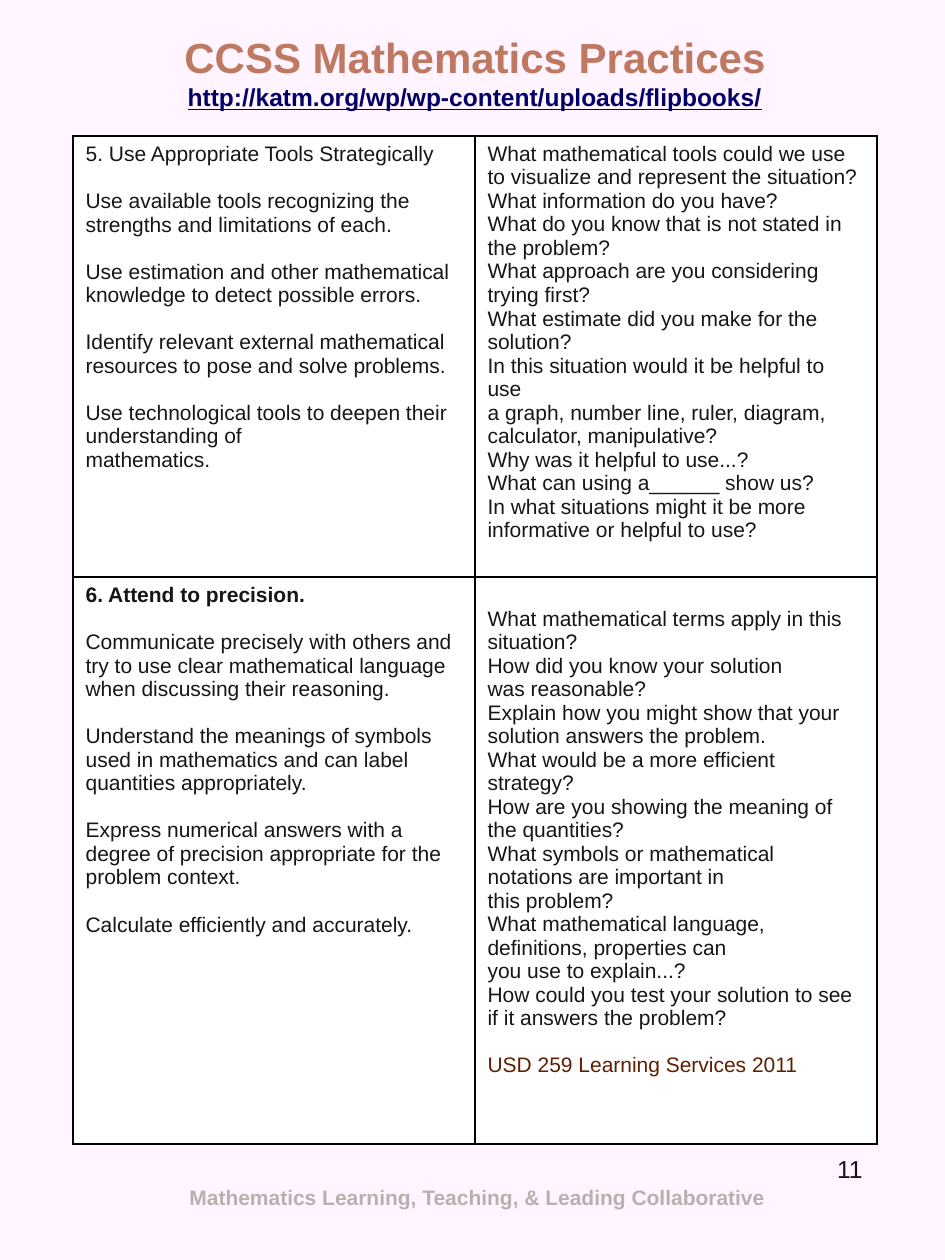
from lxml import etree
from pptx import Presentation, util as u
from pptx.dml.color import RGBColor
from pptx.enum import text as t
from pptx.oxml.ns import qn

PX = 914400 / 126
FONT = "Arial"
INK = "161616"
LINE = 13.5  # height of one line of 12 pt text, in points

# Each cell is a list of groups; a gap of one line parts the groups.
TOOLS = [
    ["5. Use Appropriate Tools Strategically"],
    ["Use available tools recognizing the strengths and limitations of each."],
    ["Use estimation and other mathematical knowledge to detect possible errors."],
    ["Identify relevant external mathematical resources to pose and solve problems."],
    ["Use technological tools to deepen their understanding of", "mathematics."],
]
TOOLS_ASK = [[
    "What mathematical tools could we use to visualize and represent the situation?",
    "What information do you have?",
    "What do you know that is not stated in the problem?",
    "What approach are you considering trying first?",
    "What estimate did you make for the solution?",
    "In this situation would it be helpful to use",
    "a graph, number line, ruler, diagram, calculator, manipulative?",
    "Why was it helpful to use...?",
    "What can using a______ show us?",
    "In what situations might it be more informative or helpful to use?",
]]
PRECISE = [
    ["6. Attend to precision."],
    ["Communicate precisely with others and try to use clear mathematical "
     "language when discussing their reasoning."],
    ["Understand the meanings of symbols used in mathematics and can label "
     "quantities appropriately."],
    ["Express numerical answers with a degree of precision appropriate for "
     "the problem context."],
    ["Calculate efficiently and accurately."],
]
PRECISE_ASK = [
    ["What mathematical terms apply in this situation?",
     "How did you know your solution",
     "was reasonable?",
     "Explain how you might show that your solution answers the problem.",
     "What would be a more efficient strategy?",
     "How are you showing the meaning of the quantities?",
     "What symbols or mathematical notations are important in",
     "this problem?",
     "What mathematical language, definitions, properties can",
     "you use to explain...?",
     "How could you test your solution to see if it answers the problem?"],
    ["USD 259 Learning Services 2011"],
]


def px(n):
    return u.Emu(round(n * PX))


def rgb(code):
    return RGBColor.from_string(code)


def style(para, size, color=INK, bold=False, align=None):
    font = para.font
    font.name, font.size, font.bold = FONT, u.Pt(size), bold
    font.color.rgb = rgb(color)
    para.alignment = align


def add_box(slide, box):
    frame = slide.shapes.add_textbox(*map(px, box)).text_frame
    frame.word_wrap = True
    return frame


def add_title(slide, box):
    frame = add_box(slide, box)
    frame.vertical_anchor = t.MSO_ANCHOR.MIDDLE
    frame.margin_top, frame.margin_bottom = 0, px(28)
    head, link = frame.paragraphs[0], frame.add_paragraph()
    head.text = "CCSS Mathematics Practices"
    link.text = "http://katm.org/wp/wp-content/uploads/flipbooks/"
    style(head, 24, "BE7960", True, t.PP_ALIGN.CENTER)
    style(link, 14, "000066", True, t.PP_ALIGN.CENTER)
    link.font.underline = True


def add_edges(cell, color="000000"):
    props = cell._tc.get_or_add_tcPr()
    for side in ("lnL", "lnR", "lnT", "lnB"):
        edge = etree.SubElement(props, qn(f"a:{side}"), w=str(u.Pt(1)))
        fill = etree.SubElement(edge, qn("a:solidFill"))
        etree.SubElement(fill, qn("a:srgbClr"), val=color)


def fill_cell(cell, groups):
    add_edges(cell)
    cell.fill.solid()
    cell.fill.fore_color.rgb = rgb("FFFFFF")
    frame = cell.text_frame
    for g, group in enumerate(groups):
        for i, line in enumerate(group):
            first = g == 0 and i == 0
            para = frame.paragraphs[0] if first else frame.add_paragraph()
            para.text = line
            style(para, 12)
            if g and i == 0:
                para.space_before = u.Pt(LINE)


def add_grid(slide, box, heights):
    rows = [(TOOLS, TOOLS_ASK), (PRECISE, PRECISE_ASK)]
    grid = slide.shapes.add_table(len(rows), 2, *map(px, box)).table
    grid.first_row = grid.horz_banding = False
    for col in grid.columns:
        col.width = px(box[2] // 2)
    for r, row in enumerate(rows):
        grid.rows[r].height = px(heights[r])
        for c, groups in enumerate(row):
            fill_cell(grid.cell(r, c), groups)
    # Heading in bold, credit in brown, one line of space above the questions
    grid.cell(1, 0).text_frame.paragraphs[0].font.bold = True
    ask = grid.cell(1, 1)
    ask.margin_top = px(30)
    ask.text_frame.paragraphs[-1].font.color.rgb = rgb("5C1F00")


def add_note(slide, box, words, *look):
    para = add_box(slide, box).paragraphs[0]
    para.text = words
    style(para, *look)


def main():
    deck = Presentation()
    deck.slide_width, deck.slide_height = px(945), px(1260)
    slide = deck.slides.add_slide(deck.slide_layouts[6])
    back = slide.background.fill
    back.solid()
    back.fore_color.rgb = rgb("FFF4FF")

    add_title(slide, (73, 63, 804, 45))
    add_grid(slide, (73, 136, 804, 1008), (441, 567))
    # Page number and footer
    add_note(slide, (678, 1148, 197, 84), "11", 14, INK, False, t.PP_ALIGN.RIGHT)
    add_note(slide, (73, 1178, 809, 84),
             "Mathematics Learning, Teaching, & Leading Collaborative",
             12, "BBAFAE", True, t.PP_ALIGN.CENTER)
    deck.save("out.pptx")


if __name__ == "__main__":
    main()
